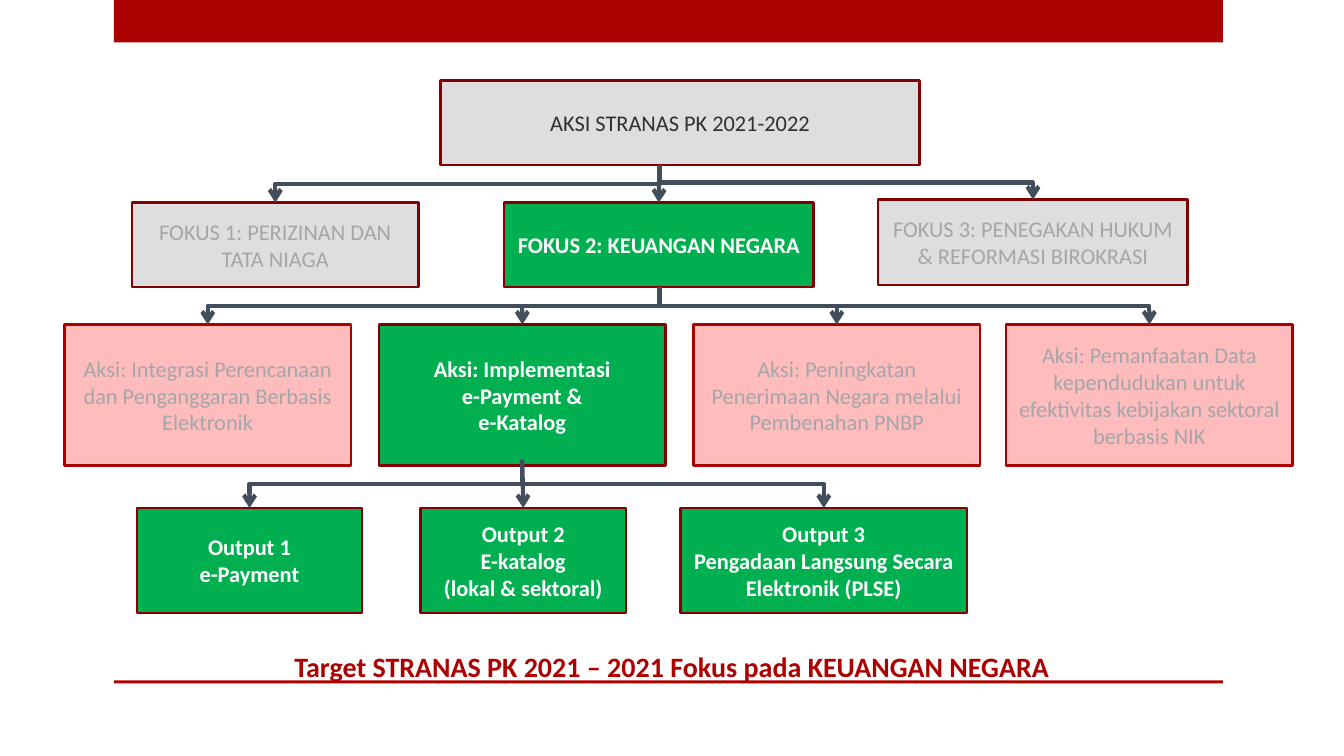
from pptx import Presentation
from pptx.dml.color import RGBColor
from pptx.enum.shapes import MSO_CONNECTOR as CONN, MSO_SHAPE as SHAPE
from pptx.enum.text import MSO_ANCHOR as ANCHOR, PP_ALIGN as ALIGN
from pptx.oxml.ns import qn
from pptx.util import Inches, Pt
from lxml.etree import SubElement

RED = RGBColor(0xAD, 0x01, 0x01)
DARK_RED = RGBColor(0x80, 0x01, 0x01)
PINK = RGBColor(0xFF, 0xBC, 0xBC)
GREY = RGBColor(0xDE, 0xDE, 0xE0)
GREEN = RGBColor(0x00, 0xB0, 0x50)
SLATE = RGBColor(0x42, 0x4E, 0x5B)
INK = RGBColor(0x30, 0x30, 0x30)
MUTED = RGBColor(0xA5, 0xA5, 0xAA)
WHITE = RGBColor(0xFF, 0xFF, 0xFF)

# Box styles: fill, border, text colour, bold
ROOT = (GREY, DARK_RED, INK, False)
OTHER_FOCUS = (GREY, DARK_RED, MUTED, False)
OTHER_ACTION = (PINK, RED, MUTED, False)
ACTIVE = (GREEN, DARK_RED, WHITE, True)

# Rows of boxes: left, top, width, height, style, text
FOCUSES = [
    (1.31, 2.01, 2.84, 0.84, OTHER_FOCUS, "FOKUS 1: PERIZINAN DAN TATA NIAGA"),
    (5, 2.01, 3.07, 0.84, ACTIVE, "FOKUS 2: KEUANGAN NEGARA"),
    (8.71, 1.98, 3.07, 0.85, OTHER_FOCUS,
     "FOKUS 3: PENEGAKAN HUKUM & REFORMASI BIROKRASI"),
]
ACTIONS = [(left, 3.22, 2.84, 1.4, style, text) for left, style, text in [
    (0.64, OTHER_ACTION,
     "Aksi: Integrasi Perencanaan dan Penganggaran Berbasis Elektronik"),
    (3.76, ACTIVE, "Aksi: Implementasi\ne-Payment &\ne-Katalog"),
    (6.88, OTHER_ACTION,
     "Aksi: Peningkatan Penerimaan Negara melalui Pembenahan PNBP"),
    (9.98, OTHER_ACTION,
     "Aksi: Pemanfaatan Data kependudukan untuk efektivitas kebijakan "
     "sektoral berbasis NIK"),
]]
OUTPUTS = [(left, 5.04, width, 1.04, ACTIVE, text) for left, width, text in [
    (1.36, 2.23, "Output 1\ne-Payment"),
    (4.17, 2.04, "Output 2\nE-katalog\n(lokal & sektoral)"),
    (6.75, 2.84, "Output 3\nPengadaan Langsung Secara Elektronik (PLSE)"),
]]


def write(tf, text, size, color, bold):
    tf.word_wrap = True
    tf.text = text
    for p in tf.paragraphs:
        p.alignment = ALIGN.CENTER
        p.font.name = "Calibri"
        p.font.size = Pt(size)
        p.font.bold = bold
        p.font.color.rgb = color


def add_rect(slide, left, top, width, height, fill):
    s = slide.shapes.add_shape(SHAPE.RECTANGLE, Inches(left), Inches(top),
                               Inches(width), Inches(height))
    s.shadow.inherit = False
    s.fill.solid()
    s.fill.fore_color.rgb = fill
    s.line.fill.background()
    return s


def add_box(slide, left, top, width, height, style, text):
    fill, border, color, bold = style
    s = add_rect(slide, left, top, width, height, fill)
    s.line.color.rgb = border
    s.line.width = Pt(1.75)
    s.text_frame.vertical_anchor = ANCHOR.MIDDLE
    write(s.text_frame, text, 16, color, bold)
    return s


def add_arrow(slide, x, y, child):
    """Arrow from a point down to the top middle of a child box."""
    end_x, end_y = child.left + child.width // 2, child.top
    run, drop = end_x - x, end_y - y
    if abs(run) < Inches(0.05):
        c = slide.shapes.add_connector(CONN.STRAIGHT, x, y, end_x, end_y)
        c.end_connect(child, 0)
    else:
        # An elbow leaves sideways, so it is turned to leave downwards
        left = (x + end_x - drop) // 2
        top = (y + end_y - abs(run)) // 2
        near, far = (left, left + drop) if run < 0 else (left + drop, left)
        c = slide.shapes.add_connector(CONN.ELBOW, near, top, far,
                                       top + abs(run))
        turn = 90 if run < 0 else 270
        c._element.spPr.find(qn("a:xfrm")).set("rot", str(turn * 60000))
    c.line.color.rgb = SLATE
    c.line.width = Pt(3)
    SubElement(c.line._get_or_add_ln(), qn("a:tailEnd"), type="arrow")
    SubElement(c._element.spPr, qn("a:effectLst"))


def add_title(slide, text):
    s = slide.shapes.title
    s.left, s.top = Inches(0), Inches(6.39)
    s.width, s.height = Inches(13.33), Inches(0.44)
    s.text_frame.vertical_anchor = ANCHOR.TOP
    write(s.text_frame, text, 20, RED, True)


def main():
    prs = Presentation()
    prs.slide_width, prs.slide_height = Inches(13.33), Inches(7.5)
    slide = prs.slides.add_slide(prs.slide_layouts[5])

    # Top band, bottom rule and title
    add_rect(slide, 1.13, 0, 11, 0.42, RED)
    add_rect(slide, 1.13, 6.75, 11, 0.03, RED)
    add_title(slide, "Target STRANAS PK 2021 – 2021 Fokus pada KEUANGAN NEGARA")

    # Boxes
    add_box(slide, 4.37, 0.8, 4.75, 0.84, ROOT, "AKSI STRANAS PK 2021-2022")
    focuses, actions, outputs = [
        [add_box(slide, *box) for box in row]
        for row in (FOCUSES, ACTIONS, OUTPUTS)]

    # Arrows from each level to the next
    for x, y, children in [(6.54, 1.64, focuses), (6.54, 2.85, actions),
                           (5.18, 4.56, outputs)]:
        for child in children:
            add_arrow(slide, Inches(x), Inches(y), child)

    prs.save("out.pptx")


if __name__ == "__main__":
    main()
